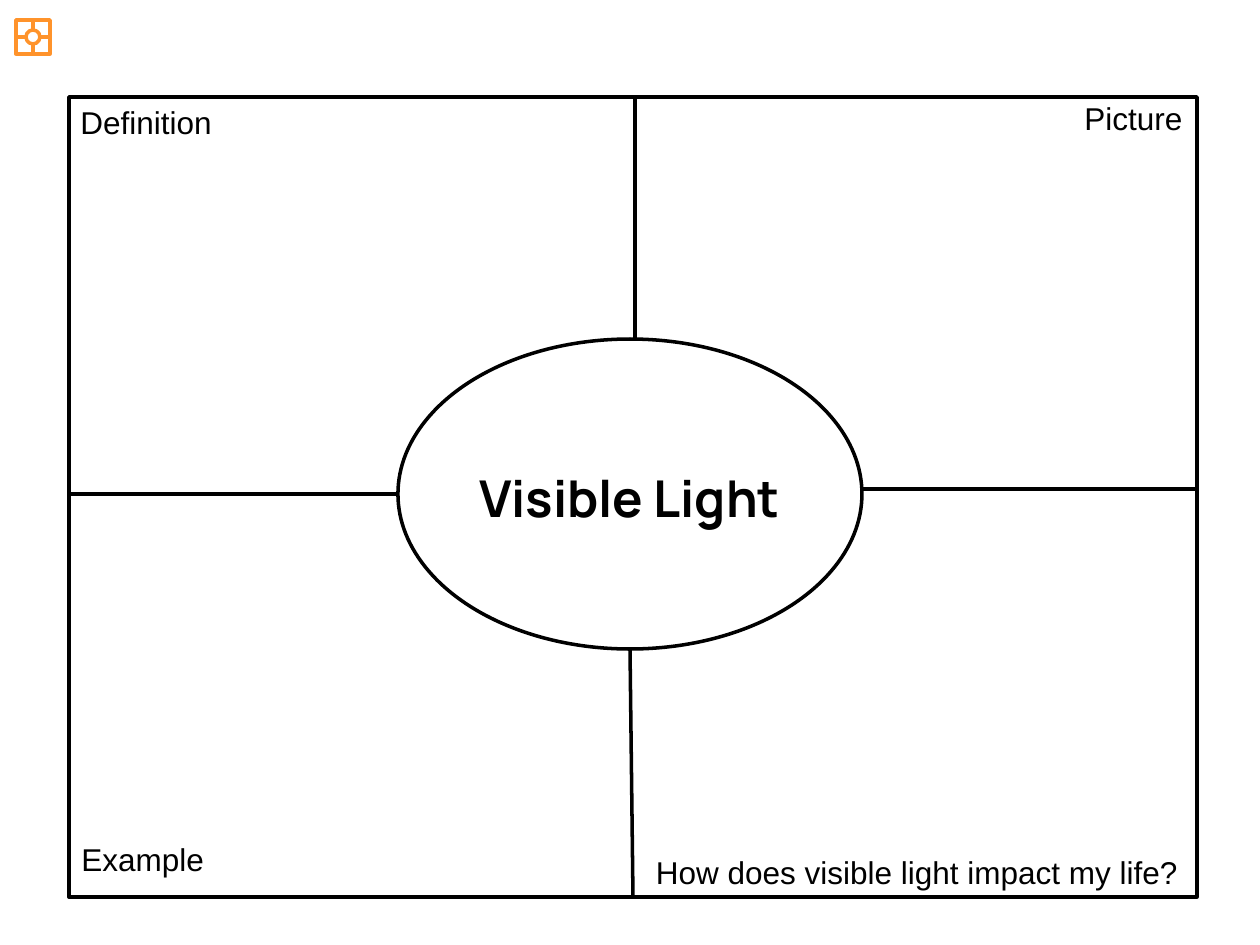
from lxml import etree
from pptx import Presentation
from pptx.dml.color import RGBColor
from pptx.enum.shapes import MSO_CONNECTOR as CONNECTOR, MSO_SHAPE as SHAPE
from pptx.enum.text import MSO_AUTO_SIZE as AUTO_SIZE, PP_ALIGN as ALIGN
from pptx.oxml.ns import qn
from pptx.util import Inches, Pt

BLACK, ORANGE, WHITE = "000000", "FF932B", "FFFFFF"

ORGANIZER = {
    "color": BLACK,
    "frame": (69, 97, 1128, 800),
    "center": (398, 339, 464, 310),
    "dividers": [
        (635, 97, 635, 339),
        (630, 649, 633, 896),
        (69, 494, 398, 494),
        (862, 489, 1197, 489),
    ],
}
ICON = {
    "color": ORANGE,
    "frame": (16, 20, 34, 34),
    "center": (26, 30, 14, 14),
    "dividers": [
        (33, 20, 33, 30),
        (33, 44, 33, 54),
        (16, 37, 26, 37),
        (40, 37, 50, 37),
    ],
}
TOPIC = ("Visible Light", (412, 461, 436, 74), ALIGN.CENTER)
PROMPTS = [
    ("Definition", (68, 97, 158, 50), ALIGN.LEFT),
    ("Example", (69, 834, 149, 50), ALIGN.LEFT),
    ("Picture", (1072, 93, 125, 50), ALIGN.LEFT),
    ("How does visible light impact my life?", (624, 847, 566, 50), ALIGN.RIGHT),
]


def px(*lengths):
    return [Inches(length / 126) for length in lengths]


def rgb(color):
    return RGBColor.from_string(color)


def style_line(line, color):
    line.color.rgb = rgb(color)
    line.width = Pt(2)


def add_outline(slide, kind, box, color, fill=None):
    outline = slide.shapes.add_shape(kind, *px(*box))
    outline.shadow.inherit = False
    if fill:
        outline.fill.solid()
        outline.fill.fore_color.rgb = rgb(fill)
    else:
        outline.fill.background()
    style_line(outline.line, color)


def add_diagram(slide, diagram):
    color = diagram["color"]
    add_outline(slide, SHAPE.RECTANGLE, diagram["frame"], color)
    for ends in diagram["dividers"]:
        divider = slide.shapes.add_connector(CONNECTOR.STRAIGHT, *px(*ends))
        style_line(divider.line, color)
        etree.SubElement(divider._element.spPr, qn("a:effectLst"))
    add_outline(slide, SHAPE.OVAL, diagram["center"], color, WHITE)


def add_label(slide, label, font, size, bold=False):
    text, box, align = label
    frame = slide.shapes.add_textbox(*px(*box)).text_frame
    frame.word_wrap = True
    frame.auto_size = AUTO_SIZE.SHAPE_TO_FIT_TEXT
    paragraph = frame.paragraphs[0]
    paragraph.alignment = align
    run = paragraph.add_run()
    run.text = text
    run.font.name = font
    run.font.size = Pt(size)
    run.font.bold = bold
    run.font.color.rgb = rgb(BLACK)


def main():
    deck = Presentation()
    deck.slide_width, deck.slide_height = px(1260, 945)
    slide = deck.slides.add_slide(deck.slide_layouts[6])
    add_diagram(slide, ORGANIZER)
    add_label(slide, TOPIC, "Manrope", 29, bold=True)
    for prompt in PROMPTS:
        add_label(slide, prompt, "Arial", 18)
    add_diagram(slide, ICON)
    deck.save("out.pptx")


if __name__ == "__main__":
    main()
